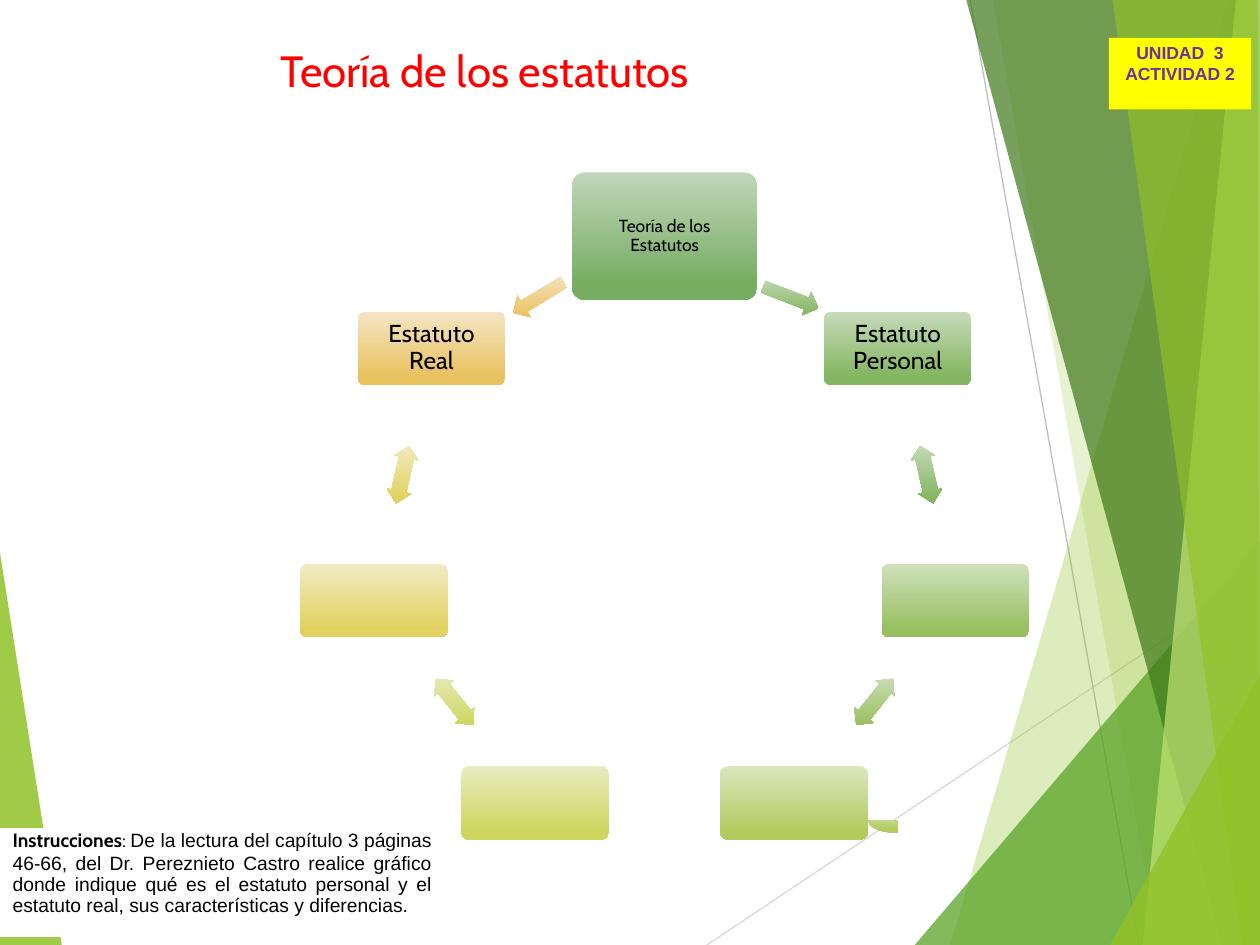
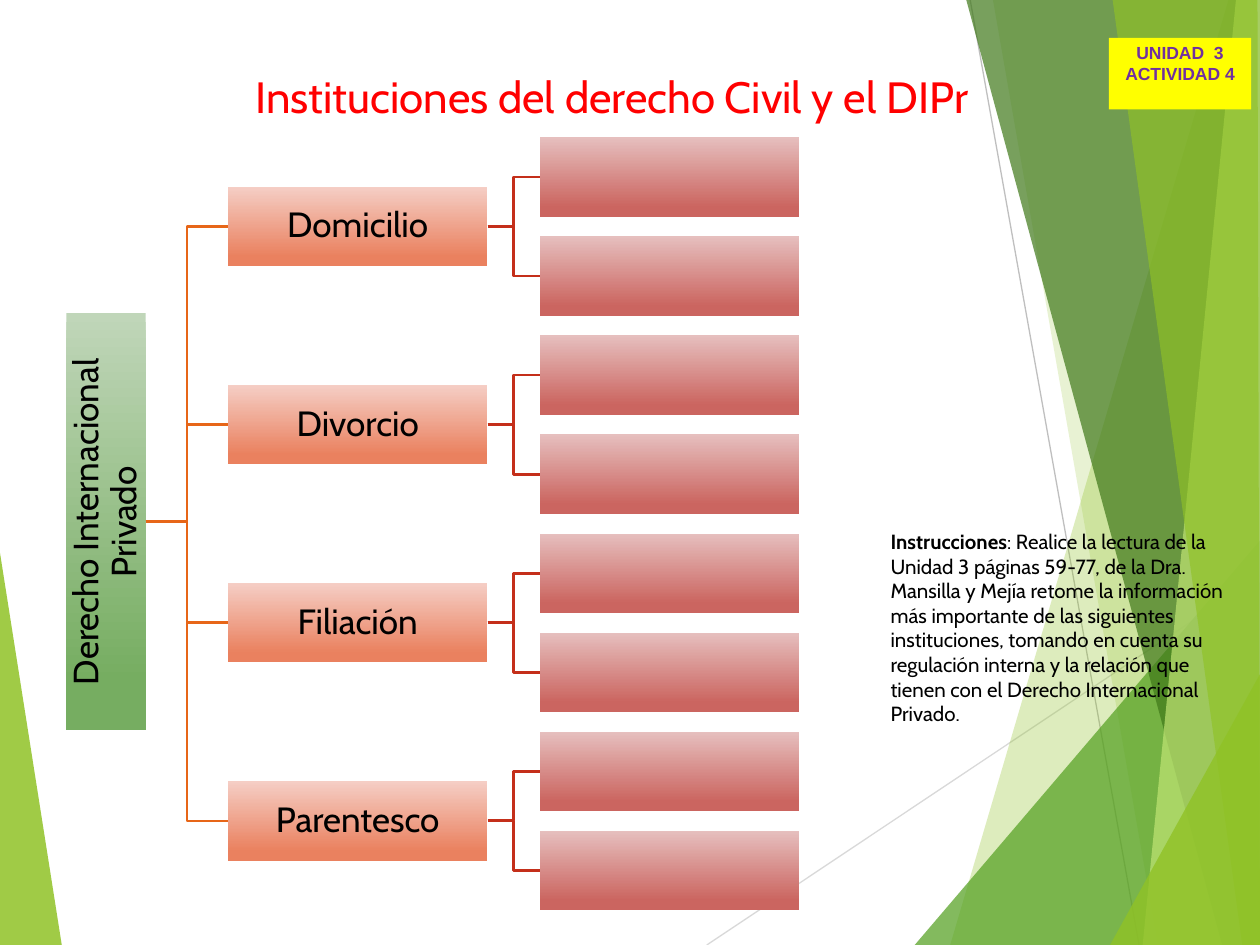
from dataclasses import dataclass
from math import cos, radians, sin

from lxml.etree import SubElement
from pptx import Presentation
from pptx.dml.color import RGBColor
from pptx.enum.shapes import MSO_CONNECTOR as Link, MSO_SHAPE as Kind
from pptx.enum.text import MSO_ANCHOR as Anchor, MSO_AUTO_SIZE as AutoSize, PP_ALIGN as Align
from pptx.oxml.ns import qn
from pptx.util import Pt

WIDTH, HEIGHT = 720, 540
FONT = "Cabin"
BLACK, WHITE, RED, YELLOW, PURPLE = "000000", "FFFFFF", "FF0000", "FFFF00", "7030A0"
LIME, LEAF = "90C226", "54A021"
ORANGE_LINE, RED_LINE = "E76618", "C42F1A"
GRADIENT_END = 0.88


@dataclass(frozen=True)
class Box:
    left: float
    top: float
    width: float
    height: float

    def emu(self) -> list:
        return [Pt(side) for side in (self.left, self.top, self.width, self.height)]


@dataclass(frozen=True)
class Band:
    points: tuple
    color: str
    opacity: int


@dataclass(frozen=True)
class Shade:
    light: str
    dark: str


@dataclass(frozen=True)
class Node:
    shade: Shade
    label: str = ""
    width: float = 84.3
    height: float = 42
    size: float = 14


GREEN = Shade("C0D6B9", "76AD61")
SALMON = Shade("F5CEC5", "EA815F")
ROSE = Shade("E6BFBE", "CB6560")

LEFT_BAND = Band(((0, 316), (35.3, 540), (0, 540)), LIME, 85)
RIGHT_BANDS = [
    Band(((702, 0), (543, 540), (720, 540), (720, 0)), LIME, 30),
    Band(((567.4, 0), (661.7, 540), (720, 540), (720, 0)), LIME, 20),
    Band(((522.7, 540), (720, 308.9), (720, 540)), LEAF, 72),
    Band(((552.2, 0), (698.4, 540), (720, 540), (720, 0)), "3F7819", 70),
    Band(((706.3, 0), (653, 540), (720, 540), (720, 0)), "C0E474", 70),
    Band(((635.8, 0), (709.9, 540), (720, 540), (718.6, 0)), LIME, 65),
    Band(((634.3, 540), (720, 385.2), (720, 540)), LIME, 80),
]

# Nodes of the cycle, clockwise from the top
CYCLE = [
    Node(GREEN, "Teoría de los Estatutos", 105.8, 72.7, 10),
    Node(Shade("C6DBBB", "85B661"), "Estatuto Personal"),
    Node(Shade("CFE0BC", "98C061")),
    Node(Shade("DAE6BE", "B1CB60")),
    Node(Shade("E8EBC0", "CED660")),
    Node(Shade("F1EBC3", "E1D260")),
    Node(Shade("F5E5C5", "E9C260"), "Estatuto Real"),
]
BRANCHES = ["Domicilio", "Divorcio", "Filiación", "Parentesco"]


def color(value: str) -> RGBColor:
    return RGBColor.from_string(value)


def style(para, size: float, value: str = BLACK, font: str = FONT,
          bold: bool = False, align=Align.CENTER) -> None:
    para.alignment = align
    para.font.name, para.font.size, para.font.bold = font, Pt(size), bold
    para.font.color.rgb = color(value)


def set_insets(holder, across: float, down: float) -> None:
    holder.margin_left = holder.margin_right = Pt(across)
    holder.margin_top = holder.margin_bottom = Pt(down)


def paint(shape, value: str, opacity: int = 100) -> None:
    shape.shadow.inherit = False
    shape.line.fill.background()
    shape.fill.solid()
    shape.fill.fore_color.rgb = color(value)
    if opacity < 100:
        tint = next(shape._element.spPr.iter(qn("a:srgbClr")))
        SubElement(tint, qn("a:alpha")).set("val", str(opacity * 1000))


def add_shaded(page, kind, box: Box, shade: Shade, turn: float = 0):
    shape = page.shapes.add_shape(kind, *box.emu())
    shape.shadow.inherit = False
    shape.line.fill.background()
    shape.rotation = turn
    shape.fill.gradient()
    shape.fill.gradient_angle = 270
    stops = zip(shape.fill.gradient_stops, (shade.light, shade.dark), (0, GRADIENT_END))
    for stop, value, position in stops:
        stop.color.rgb, stop.position = color(value), position
    # The shading stays vertical when the shape turns
    shape._element.spPr.find(qn("a:gradFill")).set("rotWithShape", "0")
    return shape


def write_label(shape, label: str, size: float, inset: float) -> None:
    frame = shape.text_frame
    frame.word_wrap, frame.vertical_anchor = True, Anchor.MIDDLE
    set_insets(frame, inset, inset)
    para = frame.paragraphs[0]
    para.text, para.line_spacing = label, 0.9
    style(para, size)


def add_line(page, kind, value: str, weight: float, ends: tuple = (0, 0, 0, 0)):
    line = page.shapes.add_connector(kind, *(Pt(end) for end in ends))
    line.line.color.rgb, line.line.width = color(value), Pt(weight)
    SubElement(line._element.spPr, qn("a:effectLst"))
    return line


def add_band(page, band: Band) -> None:
    start, *others = [(Pt(x), Pt(y)) for x, y in band.points]
    outline = page.shapes.build_freeform(*start, scale=1.0)
    outline.add_line_segments(others, close=True)
    paint(outline.convert_to_shape(), band.color, band.opacity)


def start_page(deck, title: str, title_box: Box, activity: int):
    page = deck.slides.add_slide(deck.slide_layouts[5])
    # Backdrop
    add_band(page, LEFT_BAND)
    add_line(page, Link.STRAIGHT, "D9D9D9", 0.75, (403.9, HEIGHT, WIDTH, 329))
    add_line(page, Link.STRAIGHT, "BFBFBF", 0.75, (554.4, 0, 650.9, HEIGHT))
    for band in RIGHT_BANDS:
        add_band(page, band)
    # Title, in front of the backdrop
    heading = page.shapes.title
    page.shapes._spTree.append(heading._element)
    heading.left, heading.top, heading.width, heading.height = title_box.emu()
    frame = heading.text_frame
    frame.text, frame.word_wrap = title, True
    frame.auto_size, frame.vertical_anchor = AutoSize.NONE, Anchor.TOP
    style(frame.paragraphs[0], 25, RED)
    # Activity tag
    tag = page.shapes.add_shape(Kind.RECTANGLE, *Box(633.6, 21.6, 81.4, 41).emu())
    paint(tag, YELLOW)
    frame = tag.text_frame
    frame.word_wrap, frame.vertical_anchor = True, Anchor.TOP
    set_insets(frame, 4.3, 2.2)
    frame.text = f"UNIDAD  3\nACTIVIDAD {activity}"
    for para in frame.paragraphs:
        style(para, 10, PURPLE, "Arial", True)
    return page


def add_spans(para, *spans: tuple) -> None:
    for words, bold, font in spans:
        span = para.add_run()
        span.text, span.font.bold, span.font.name = words, bold, font


def draw_cycle(page) -> None:
    center_x, center_y, radius = 379.8, 305.3, 170.4
    step = 360 / len(CYCLE)
    spots = [(center_x + radius * sin(radians(step * i)),
              center_y - radius * cos(radians(step * i))) for i in range(len(CYCLE))]
    for node, (x, y) in zip(CYCLE, spots):
        box = Box(x - node.width / 2, y - node.height / 2, node.width, node.height)
        shape = add_shaded(page, Kind.ROUNDED_RECTANGLE, box, node.shade)
        shape.adjustments[0] = 0.1
        if node.label:
            write_label(shape, node.label, node.size, 5)

    # Arrows between neighbours; those beside the larger top node point away from it
    long, thick = 33.8, 14.4
    outward = {0: (21.3, 5.5), 6: (148.8, -5.5)}
    shades = [CYCLE[i].shade for i in (1, 1, 2, 3, 4, 5, 6)]
    for i, shade in enumerate(shades):
        (x1, y1), (x2, y2) = spots[i], spots[(i + 1) % len(spots)]
        x, y, turn, kind = (x1 + x2) / 2, (y1 + y2) / 2, step * (i + 0.5), Kind.LEFT_RIGHT_ARROW
        if i == 3:
            add_shaded(page, Kind.ARC, Box(496.1, 461.5, long, thick), shade, 180)
            continue
        if i in outward:
            turn, shift = outward[i]
            x, y, kind = x + shift, y + 3, Kind.RIGHT_ARROW
        if i == 4:
            shade = CYCLE[4].shade
        arrow = add_shaded(page, kind, Box(x - long / 2, y - thick / 2, long, thick), shade, turn)
        if kind == Kind.LEFT_RIGHT_ARROW:
            arrow.adjustments[0], arrow.adjustments[1] = 0.6, 0.5


def draw_instruction_table(page) -> None:
    table = page.shapes.add_table(1, 1, *Box(0, 473.8, 254.2, 61.2).emu()).table
    table.first_row = table.horz_banding = False
    cell = table.cell(0, 0)
    cell.fill.solid()
    cell.fill.fore_color.rgb = color(WHITE)
    set_insets(cell, 7.2, 0)
    para = cell.text_frame.paragraphs[0]
    style(para, 11, align=Align.JUSTIFY)
    add_spans(para, ("Instrucciones", True, FONT), (": ", False, FONT),
              ("De la lectura del capítulo 3 páginas 46-66, del Dr. Pereznieto Castro "
               "realice gráfico donde indique qué es el estatuto personal y el estatuto "
               "real, sus características y diferencias.", False, "Arial"))


def join(page, parent, child, value: str) -> None:
    elbow = add_line(page, Link.ELBOW, value, 1.5)
    elbow.begin_connect(parent, 3)
    elbow.end_connect(child, 1)


def draw_tree(page) -> None:
    top, pitch, width, height = 78.5, 56.6, 148.3, 45.4
    root = add_shaded(page, Kind.RECTANGLE, Box(37.9, 179, height, 238.3), GREEN)
    write_label(root, "Derecho Internacional Privado", 20, 0.7)
    root.text_frame._txBody.bodyPr.set("vert", "vert270")
    for i, label in enumerate(BRANCHES):
        pair_top = top + 2 * i * pitch
        branch_box = Box(130.3, pair_top + pitch / 2, width, height)
        branch = add_shaded(page, Kind.RECTANGLE, branch_box, SALMON)
        write_label(branch, label, 20, 0.7)
        join(page, root, branch, ORANGE_LINE)
        for leaf_top in (pair_top, pair_top + pitch):
            leaf = add_shaded(page, Kind.RECTANGLE, Box(308.4, leaf_top, width, height), ROSE)
            join(page, branch, leaf, RED_LINE)


def draw_instruction_note(page) -> None:
    frame = page.shapes.add_textbox(*Box(501.8, 298.8, 218, 139.7).emu()).text_frame
    frame.word_wrap = True
    para = frame.paragraphs[0]
    style(para, 11.7, align=Align.LEFT)
    add_spans(para, ("Instrucciones", True, FONT),
              (": Realice la lectura de la Unidad 3 páginas 59-77, de la Dra. Mansilla y "
               "Mejía retome la información más importante de las siguientes instituciones, "
               "tomando en cuenta su regulación interna y la relación que tienen con el "
               "Derecho Internacional Privado.", False, FONT))


def main() -> None:
    deck = Presentation()
    deck.slide_width, deck.slide_height = Pt(WIDTH), Pt(HEIGHT)

    page = start_page(deck, "Teoría de los estatutos", Box(31, 21.6, 491.8, 68.4), 2)
    draw_cycle(page)
    draw_instruction_table(page)

    page = start_page(deck, "Instituciones del derecho Civil y el DIPr",
                      Box(72.7, 36, 553.7, 68.4), 4)
    draw_tree(page)
    draw_instruction_note(page)

    deck.save("out.pptx")


if __name__ == "__main__":
    main()
